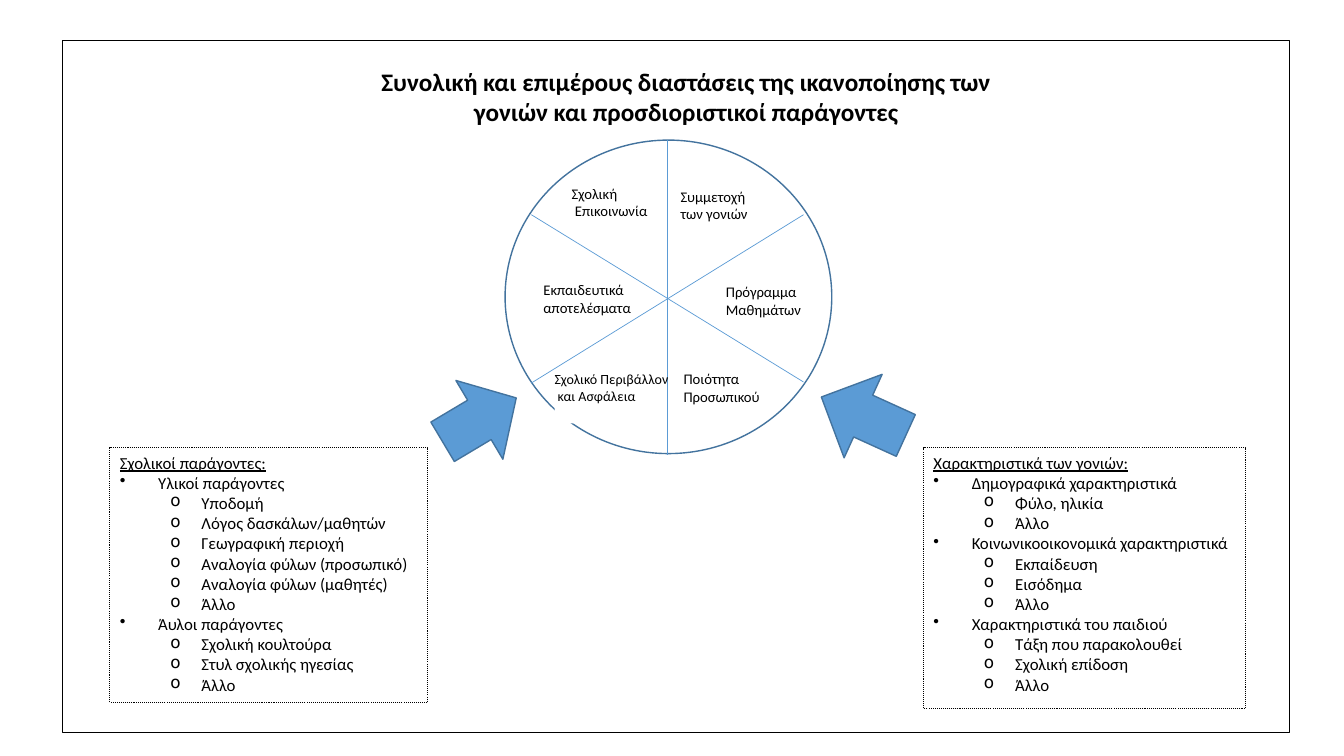
from pptx import Presentation
from pptx import util as u
from pptx.dml.color import RGBColor
from pptx.enum import dml, shapes, text
from pptx.oxml.ns import qn
from lxml import etree

BLACK = RGBColor(0x00, 0x00, 0x00)
WHITE = RGBColor(0xFF, 0xFF, 0xFF)
BLUE = RGBColor(0x5B, 0x9B, 0xD5)
NAVY = RGBColor(0x43, 0x73, 0x9E)

SCALE = 9144  # 100 px to the inch
KIND = shapes.MSO_SHAPE
DOTS = dml.MSO_LINE.ROUND_DOT
# bullet, left margin and indent in px for each list level
LEVELS = [("•", 38, -38), ("o", 81, -31)]


def px(n):
    return u.Emu(n * SCALE)


class Board:
    def __init__(self, slide, font="Calibri"):
        self.slide = slide
        self.font = font

    def shape(self, kind, box, fill=None, line=None, width=0.75, dash=None, turn=0):
        item = self.slide.shapes.add_shape(kind, *map(px, box))
        item.shadow.inherit = False
        item.rotation = turn
        if fill is None:
            item.fill.background()
        else:
            item.fill.solid()
            item.fill.fore_color.rgb = fill
        if line is None:
            item.line.fill.background()
        else:
            item.line.color.rgb = line
            item.line.width = u.Pt(width)
            if dash:
                item.line.dash_style = dash
        return item

    def line(self, *ends):
        item = self.slide.shapes.add_connector(
            shapes.MSO_CONNECTOR.STRAIGHT, *map(px, ends))
        item.line.color.rgb = BLUE
        item.line.width = u.Pt(0.5)
        etree.SubElement(item._element.spPr, qn("a:effectLst"))

    def words(self, item, rows, size, align=text.PP_ALIGN.LEFT, **style):
        frame = item.text_frame
        frame.vertical_anchor = text.MSO_ANCHOR.TOP
        frame.text = "\n".join(rows)
        look = {"name": self.font, "size": u.Pt(size), **style}
        for par in frame.paragraphs:
            par.alignment = align
            for run in par.runs:
                run.font.color.rgb = BLACK
                for key, value in look.items():
                    setattr(run.font, key, value)
        return frame

    def title(self, box, head):
        item = self.slide.shapes.add_textbox(*map(px, box))
        frame = self.words(item, [head], 18, text.PP_ALIGN.CENTER, bold=True)
        frame.word_wrap = True

    def label(self, box, rows, size=10.5, space=1.0):
        frame = self.words(self.shape(KIND.RECTANGLE, box, WHITE), rows, size)
        frame.word_wrap = False
        for side in ("left", "top", "right", "bottom"):
            setattr(frame, f"margin_{side}", 0)
        for par in frame.paragraphs:
            par.line_spacing = space

    def factors(self, box, head, groups):
        rows = [(head, None)]
        for name, parts in groups:
            rows += [(name, 0)] + [(part, 1) for part in parts]
        item = self.shape(KIND.RECTANGLE, box, WHITE, BLACK, dash=DOTS)
        frame = self.words(item, [row for row, _ in rows], 12)
        frame.word_wrap = True
        frame.paragraphs[0].runs[0].font.underline = True
        for par, (_, level) in zip(frame.paragraphs, rows):
            if level is not None:
                self.bullet(par, level)

    def bullet(self, par, level):
        mark, left, indent = LEVELS[level]
        par.level = level
        props = par._p.get_or_add_pPr()
        props.set("marL", str(px(left)))
        props.set("indent", str(px(indent)))
        etree.SubElement(props, qn("a:buChar")).set("char", mark)


def main():
    deck = Presentation()
    deck.slide_width, deck.slide_height = px(1333), px(750)
    board = Board(deck.slides.add_slide(deck.slide_layouts[6]))

    # Frame, wheel and arrows
    board.shape(KIND.RECTANGLE, (62, 40, 1217, 687), WHITE, BLACK)
    board.shape(KIND.OVAL, (501, 139, 324, 311), line=NAVY, width=1)
    board.line(662, 139, 662, 451)
    board.line(527, 380, 797, 213)
    for box, turn in [((430, 374, 91, 85), 239.2), ((811, 367, 91, 92), 114.5)]:
        board.shape(KIND.DOWN_ARROW, box, BLUE, NAVY, 1, turn=turn)

    # School factors
    board.factors((109, 444, 315, 253), "Σχολικοί παράγοντες:", [
        ("Υλικοί παράγοντες", [
            "Υποδομή", "Λόγος δασκάλων/μαθητών", "Γεωγραφική περιοχή",
            "Αναλογία φύλων (προσωπικό)", "Αναλογία φύλων (μαθητές)", "Άλλο"]),
        ("Άυλοι παράγοντες", [
            "Σχολική κουλτούρα", "Στυλ σχολικής ηγεσίας", "Άλλο"]),
    ])

    # Title
    board.title((367, 61, 627, 68),
                "Συνολική και επιμέρους διαστάσεις της ικανοποίησης των "
                "γονιών και προσδιοριστικοί παράγοντες")

    # Sectors of the wheel
    board.line(527, 213, 797, 379)
    board.label((567, 183, 89, 43), ["Σχολική", " Επικοινωνία"])
    board.label((675, 186, 71, 40), ["Συμμετοχή", "των γονιών"])
    board.label((539, 279, 83, 33), ["Εκπαιδευτικά", "αποτελέσματα"])
    board.label((720, 281, 62, 33), ["Πρόγραμμα", "Μαθημάτων"])
    board.label((550, 368, 106, 52), ["Σχολικό Περιβάλλον", " και Ασφάλεια"], 10)
    board.label((678, 366, 68, 33), ["Ποιότητα", "Προσωπικού"], space=1.05)

    # Parent characteristics
    board.factors((916, 444, 319, 259), "Χαρακτηριστικά των γονιών:", [
        ("Δημογραφικά χαρακτηριστικά", ["Φύλο, ηλικία", "Άλλο"]),
        ("Κοινωνικοοικονομικά χαρακτηριστικά", [
            "Εκπαίδευση", "Εισόδημα", "Άλλο"]),
        ("Χαρακτηριστικά του παιδιού", [
            "Τάξη που παρακολουθεί", "Σχολική επίδοση", "Άλλο"]),
    ])

    deck.save("out.pptx")


if __name__ == "__main__":
    main()
